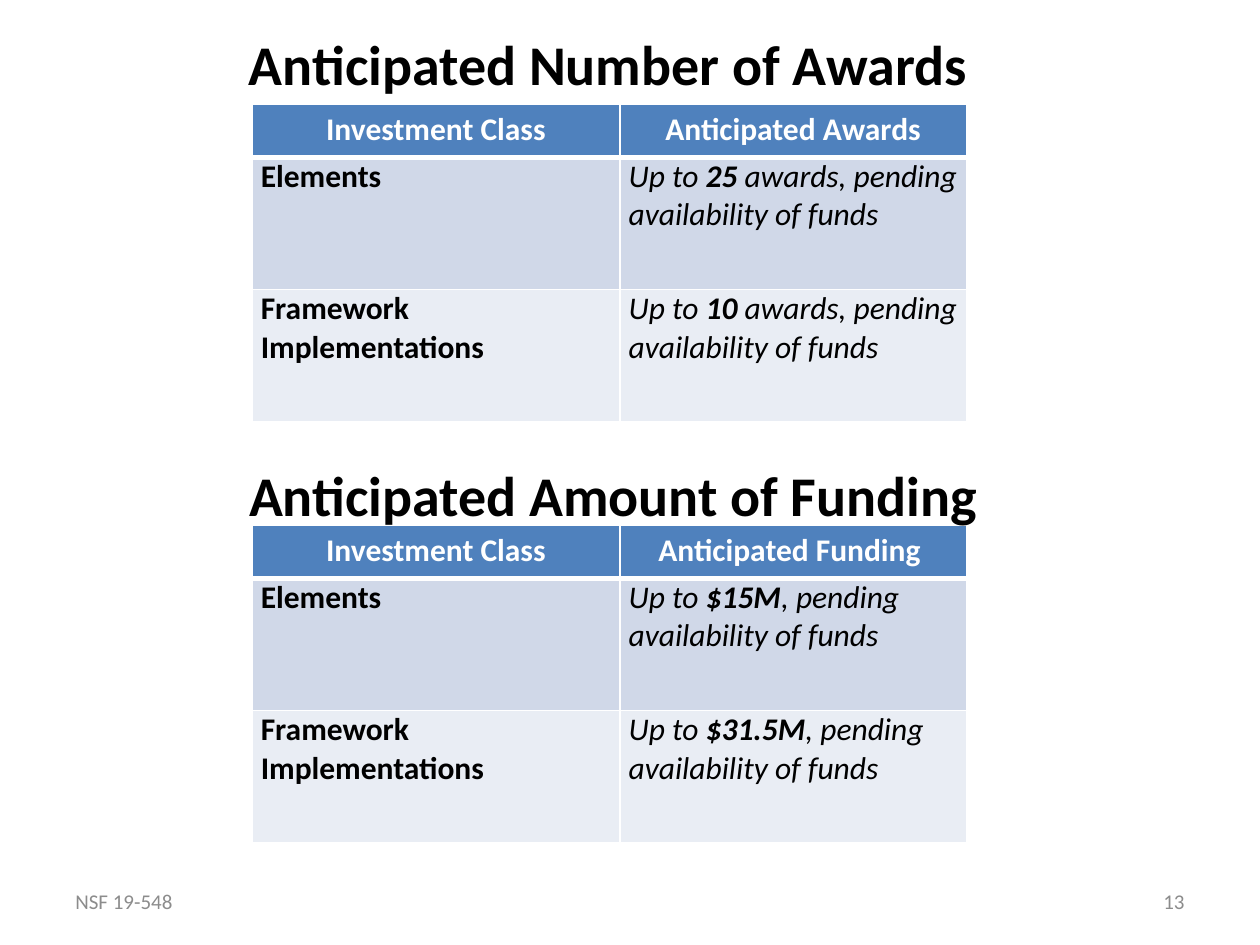
from lxml.etree import SubElement
from pptx import Presentation
from pptx.dml.color import RGBColor
from pptx.enum.text import MSO_ANCHOR, PP_ALIGN
from pptx.oxml.ns import qn
from pptx.util import Inches, Pt

BLACK = RGBColor(0x00, 0x00, 0x00)
WHITE = RGBColor(0xFF, 0xFF, 0xFF)
GRAY = RGBColor(0x8C, 0x8C, 0x8C)
BLUE = RGBColor(0x4F, 0x81, 0xBD)
BAND_DARK = RGBColor(0xD0, 0xD8, 0xE8)
BAND_LIGHT = RGBColor(0xE9, 0xED, 0xF4)

CLASSES = ["Elements", "Framework Implementations"]
SECTIONS = [
    {"title": "Anticipated Number of Awards", "title_box": (0.83, 0, 8, 1),
     "top": 0.83, "header": "Anticipated Awards",
     "amounts": ["25", "10"], "ending": " awards, pending availability of funds"},
    {"title": "Anticipated Amount of Funding", "title_box": (0.83, 3.42, 8.08, 1),
     "top": 4.17, "header": "Anticipated Funding ",
     "amounts": ["$15M", "$31.5M"], "ending": ", pending availability of funds"},
]
FOOTERS = [("13", 7.17, PP_ALIGN.RIGHT), ("NSF 19-548", 0.5, PP_ALIGN.LEFT)]

TABLE_LEFT = 2
COLUMNS = [2.92, 2.75]
ROWS = [0.42, 1.05, 1.05, 0.33]
FILLS = [BLUE, BAND_DARK, BAND_LIGHT, WHITE]


def write(tf, *parts, size=18, color=BLACK, align=PP_ALIGN.LEFT, italic=False):
    p = tf.paragraphs[0]
    p.alignment = align
    for text, bold in parts:
        r = p.add_run()
        r.text = text
        r.font.name = "Calibri"
        r.font.size = Pt(size)
        r.font.bold = bold
        r.font.italic = italic
        r.font.color.rgb = color


def add_label(slide, box, *parts, **style):
    sp = slide.shapes.add_textbox(*map(Inches, box))
    tf = sp.text_frame
    tf.word_wrap = True
    tf.vertical_anchor = MSO_ANCHOR.MIDDLE
    write(tf, *parts, **style)


def style_cell(cell, row):
    tc_pr = cell._tc.get_or_add_tcPr()
    widths = {"L": 1, "R": 1, "T": 3 if row == 1 else 1, "B": 3 if row == 0 else 1}
    for side, width in widths.items():
        ln = SubElement(tc_pr, qn(f"a:ln{side}"), w=str(Pt(width)))
        fill = SubElement(ln, qn("a:solidFill"))
        SubElement(fill, qn("a:srgbClr"), val=str(WHITE))
    cell.fill.solid()
    cell.fill.fore_color.rgb = FILLS[row]
    if row in (1, 2):
        cell.margin_left = cell.margin_right = Inches(0.07)
        cell.margin_top = cell.margin_bottom = 0


def add_section(slide, section):
    box = (TABLE_LEFT, section["top"], sum(COLUMNS), sum(ROWS))
    table = slide.shapes.add_table(len(ROWS), len(COLUMNS), *map(Inches, box)).table
    for column, width in zip(table.columns, COLUMNS):
        column.width = Inches(width)
    for i, height in enumerate(ROWS):
        table.rows[i].height = Inches(height)
        for cell in table.rows[i].cells:
            style_cell(cell, i)
    for j, text in enumerate(["Investment Class", section["header"]]):
        write(table.cell(0, j).text_frame, (text, True), color=WHITE, align=PP_ALIGN.CENTER)
    for i, (name, amount) in enumerate(zip(CLASSES, section["amounts"]), 1):
        write(table.cell(i, 0).text_frame, (name, True))
        write(table.cell(i, 1).text_frame, ("Up to ", False), (amount, True),
              (section["ending"], False), italic=True)
    add_label(slide, section["title_box"], (section["title"], True),
              size=32, align=PP_ALIGN.CENTER)


def main():
    prs = Presentation()
    prs.slide_width, prs.slide_height = Inches(10), Inches(7.5)
    slide = prs.slides.add_slide(prs.slide_layouts[6])
    for section in SECTIONS:
        add_section(slide, section)
    for text, left, align in FOOTERS:
        add_label(slide, (left, 6.95, 2.33, 0.4), (text, False),
                  size=12, color=GRAY, align=align)
    prs.save("out.pptx")


if __name__ == "__main__":
    main()
